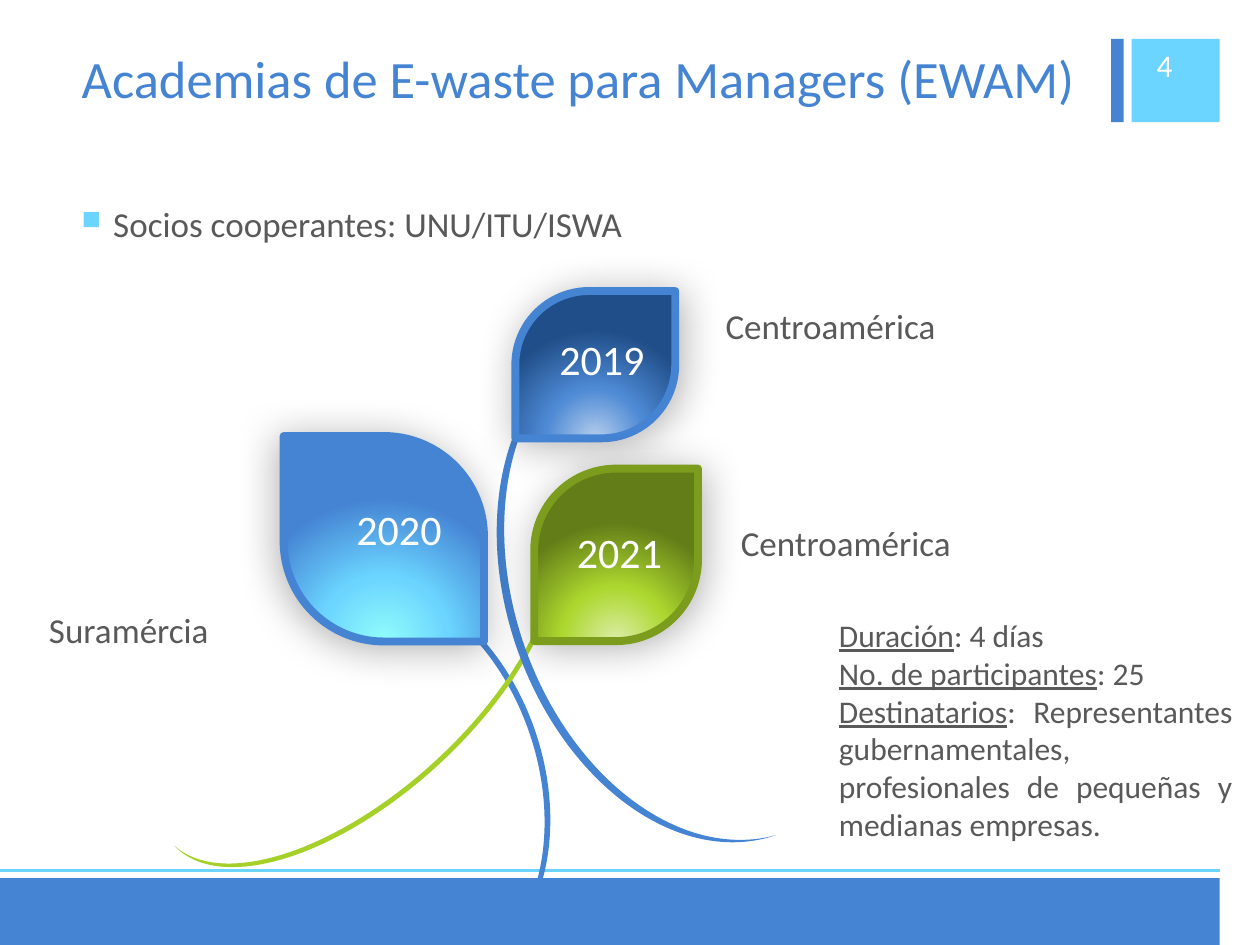
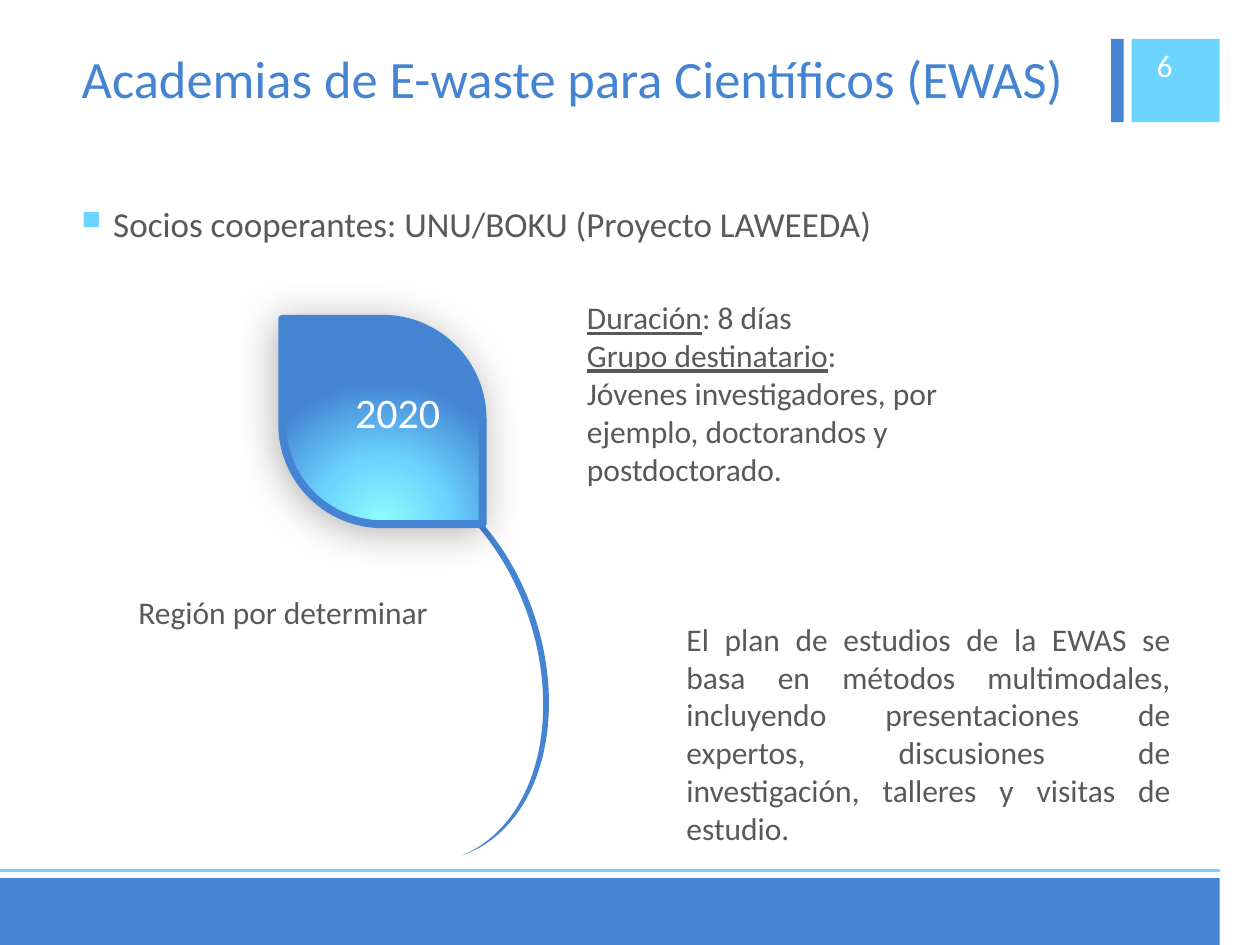
"""Builds two slides on the e-waste academies, with years drawn as leaves on stems."""
from dataclasses import dataclass
from typing import NamedTuple

from lxml.etree import SubElement
from pptx import Presentation
from pptx.dml.color import RGBColor
from pptx.enum.shapes import MSO_CONNECTOR, MSO_SHAPE
from pptx.enum.text import MSO_ANCHOR, PP_ALIGN
from pptx.oxml.ns import qn
from pptx.shapes.autoshape import Shape
from pptx.slide import Slide
from pptx.util import Pt

RECTANGLE = MSO_SHAPE.RECTANGLE
MOON = MSO_SHAPE.MOON
LEAF = MSO_SHAPE.ROUND_2_DIAG_RECTANGLE
STRAIGHT = MSO_CONNECTOR.STRAIGHT
TOP, MIDDLE = MSO_ANCHOR.TOP, MSO_ANCHOR.MIDDLE
LEFT, JUSTIFY = PP_ALIGN.LEFT, PP_ALIGN.JUSTIFY

FONT = "Calibri"
BLUE, SKY, GREEN = "4584D3", "6BD4FF", "A5D028"
OLIVE, GRAY, WHITE = "7C9C1E", "595959", "FFFFFF"
NAVY_GLOW = ("B5CEED", "4E8AD5", "204E88")
GREEN_GLOW = ("DCEEA7", "ACD72E", "637D18")
SKY_GLOW = ("91FDFA", SKY, BLUE)
GLOW_STOPS = (0, 46, 100)
RIGHT_EDGE = 697


class Frame(NamedTuple):
    """Position and size in points."""
    left: float
    top: float
    width: float
    height: float

    def moved(self, right: float, down: float) -> "Frame":
        """Returns the frame shifted by the given distances."""
        return self._replace(left=self.left + right, top=self.top + down)

    def lengths(self) -> tuple[Pt, ...]:
        """Returns the four lengths for a shape call."""
        return tuple(Pt(value) for value in self)


class Span(NamedTuple):
    """A piece of text with one look."""
    text: str
    underlined: bool = False


@dataclass(frozen=True)
class Note:
    """A text box whose paragraphs are tuples of spans."""
    frame: Frame
    paragraphs: tuple[tuple[Span, ...], ...]
    size: float = 18
    color: str = GRAY
    align: PP_ALIGN = LEFT
    anchor: MSO_ANCHOR = TOP
    wrap: bool = True
    bullet: bool = False


@dataclass(frozen=True)
class Stem:
    """A thin curved stem."""
    frame: Frame
    rotation: float
    color: str = BLUE
    thickness: float = 0.042
    flipped: bool = False


@dataclass(frozen=True)
class Leaf:
    """A glowing leaf with a year on it."""
    frame: Frame
    year: str
    year_left: float
    year_top: float
    glow: tuple[str, ...]
    outline: str = BLUE
    rotation: float = 0
    shadow_angle: int = 45


@dataclass(frozen=True)
class Page:
    """The content of one slide."""
    number: str
    title: str
    partners: str
    stems: tuple[Stem, ...]
    leaves: tuple[Leaf, ...]
    notes: tuple[Note, ...]


def color_of(value: str) -> RGBColor:
    """Turns a hex string into a colour."""
    return RGBColor.from_string(value)


def plain(text: str) -> tuple[tuple[Span, ...], ...]:
    """Wraps a text as a single paragraph."""
    return ((Span(text),),)


def fact(label: str, value: str) -> tuple[Span, ...]:
    """Returns a paragraph with an underlined label before its value."""
    return Span(label, True), Span(f":{value}")


def add_block(slide: Slide, kind: MSO_SHAPE, frame: Frame, color: str) -> Shape:
    """Adds a flat shape without outline or shadow."""
    block = slide.shapes.add_shape(kind, *frame.lengths())
    block.shadow.inherit = False
    block.fill.solid()
    block.fill.fore_color.rgb = color_of(color)
    block.line.fill.background()
    return block


def add_note(slide: Slide, note: Note) -> None:
    """Adds a text box."""
    box = slide.shapes.add_textbox(*note.frame.lengths())
    text_frame = box.text_frame
    text_frame.word_wrap = note.wrap
    text_frame.vertical_anchor = note.anchor
    for index, spans in enumerate(note.paragraphs):
        para = text_frame.add_paragraph() if index else text_frame.paragraphs[0]
        para.alignment = note.align
        if note.bullet:
            properties = para._p.get_or_add_pPr()
            properties.set("marL", str(Pt(18)))
            properties.set("indent", str(-Pt(18)))
            bullet_color = SubElement(properties, qn("a:buClr"))
            SubElement(bullet_color, qn("a:srgbClr"), {"val": SKY})
            SubElement(properties, qn("a:buSzPct"), {"val": "75000"})
            SubElement(properties, qn("a:buChar"), {"char": "■"})
        for span in spans:
            run = para.add_run()
            run.text = span.text
            run.font.name = FONT
            run.font.size = Pt(note.size)
            run.font.color.rgb = color_of(note.color)
            run.font.underline = span.underlined


def add_stem(slide: Slide, stem: Stem) -> None:
    """Adds a stem."""
    moon = add_block(slide, MOON, stem.frame, stem.color)
    moon.adjustments[0] = stem.thickness
    moon.rotation = stem.rotation
    if stem.flipped:
        moon.element.spPr.find(qn("a:xfrm")).set("flipH", "1")


def add_glow(shape: Shape, colors: tuple[str, ...]) -> None:
    """Fills a shape with a circular gradient centred below it."""
    shape.fill.gradient()
    gradient = shape.element.spPr.find(qn("a:gradFill"))
    gradient.clear()
    gradient.set("rotWithShape", "1")
    stops = SubElement(gradient, qn("a:gsLst"))
    for position, color in zip(GLOW_STOPS, colors):
        stop = SubElement(stops, qn("a:gs"), {"pos": str(position * 1000)})
        SubElement(stop, qn("a:srgbClr"), {"val": color})
    circle = SubElement(gradient, qn("a:path"), {"path": "circle"})
    SubElement(circle, qn("a:fillToRect"),
               {"l": "50000", "t": "130000", "r": "50000", "b": "-30000"})


def add_soft_shadow(shape: Shape, angle: int) -> None:
    """Puts a soft black shadow behind a shape."""
    effects = shape.element.spPr.find(qn("a:effectLst"))
    shadow = SubElement(effects, qn("a:outerShdw"), {
        "blurRad": str(Pt(23)), "dist": str(Pt(3)),
        "dir": str(angle * 60000), "rotWithShape": "0"})
    black = SubElement(shadow, qn("a:srgbClr"), {"val": "000000"})
    SubElement(black, qn("a:alpha"), {"val": "30000"})


def add_leaf(slide: Slide, leaf: Leaf) -> None:
    """Adds a leaf and its year."""
    shape = add_block(slide, LEAF, leaf.frame, leaf.outline)
    shape.adjustments[0] = 0.5
    shape.adjustments[1] = 0
    shape.rotation = leaf.rotation
    add_glow(shape, leaf.glow)
    shape.line.color.rgb = color_of(leaf.outline)
    shape.line.width = Pt(4.5)
    add_soft_shadow(shape, leaf.shadow_angle)
    year_frame = Frame(leaf.year_left, leaf.year_top, 63.4, 36)
    add_note(slide, Note(year_frame, plain(leaf.year), 24, WHITE, wrap=False))


def add_header(slide: Slide, page: Page) -> None:
    """Adds the title, the page number and the partners line."""
    add_block(slide, RECTANGLE, Frame(646.6, 22.3, 50.4, 47.5), SKY)
    add_block(slide, RECTANGLE, Frame(635, 22.3, 7.2, 47.5), BLUE)
    add_note(slide, Note(Frame(39.6, 19.4, 586.8, 50.4), plain(page.title),
                         30, BLUE, anchor=MIDDLE))
    add_note(slide, Note(Frame(653.8, 23, 43.9, 28.8), plain(page.number), color=WHITE))
    add_note(slide, Note(Frame(39.6, 112, 658, 32), plain(page.partners), 20, bullet=True))


def add_ground_line(slide: Slide) -> None:
    """Adds the thin line above the footer band."""
    line = slide.shapes.add_connector(STRAIGHT, Pt(RIGHT_EDGE), Pt(497.5), Pt(0), Pt(497.5))
    line.line.color.rgb = color_of(SKY)
    line.line.width = Pt(2)
    SubElement(line.element.spPr, qn("a:effectLst"))


def add_page(deck: Presentation, page: Page) -> None:
    """Adds one slide."""
    slide = deck.slides.add_slide(deck.slide_layouts[6])
    add_header(slide, page)
    add_ground_line(slide)
    for stem in page.stems:
        add_stem(slide, stem)
    for leaf in page.leaves:
        add_leaf(slide, leaf)
    for note in page.notes:
        add_note(slide, note)
    add_block(slide, RECTANGLE, Frame(0, 501.8, RIGHT_EDGE, 38.2), BLUE)


def south_stem(right: float = 0, down: float = 0) -> Stem:
    """Returns the stem of the 2020 leaf."""
    return Stem(Frame(225.4, 314.6, 82.8, 234).moved(right, down), 161.4)


def south_leaf(right: float = 0, down: float = 0) -> Leaf:
    """Returns the 2020 leaf."""
    return Leaf(Frame(160.6, 250.6, 117.4, 114.5).moved(right, down), "2020",
                196.6 + right, 284.4 + down, SKY_GLOW, rotation=270, shadow_angle=135)


MANAGERS = Page(
    "4", "Academias de E-waste para Managers (EWAM)", "Socios cooperantes: UNU/ITU/ISWA",
    (south_stem(),
     Stem(Frame(193.7, 268.6, 68.4, 285.8), 47.3, GREEN, flipped=True),
     Stem(Frame(292.3, 203, 105.1, 299.5), 341, thickness=0.043)),
    (Leaf(Frame(294.5, 166.3, 91.4, 84.2), "2019", 312.5, 187.2, NAVY_GLOW),
     Leaf(Frame(305.3, 267.8, 93.6, 98.6), "2021", 322.6, 297.4, GREEN_GLOW, OLIVE),
     south_leaf()),
    (Note(Frame(20.9, 344.2, 159.8, 31.7), plain("Suramércia"), 20),
     Note(Frame(416.2, 294.5, 164.2, 31.7), plain("Centroamérica"), 20),
     Note(Frame(407.5, 170.6, 195.8, 55.4), plain("Centroamérica"), 20),
     Note(Frame(472.3, 348.5, 239, 138.2),
          (fact("Duración", " 4 días"), fact("No. de participantes", " 25"),
           fact("Destinatarios", " Representantes gubernamentales, profesionales de "
                                 "pequeñas y medianas empresas.")), align=JUSTIFY)))

SCIENTISTS = Page(
    "6", "Academias de E-waste para Científicos (EWAS)",
    "Socios cooperantes: UNU/BOKU (Proyecto LAWEEDA)",
    (south_stem(-0.8, -67),), (south_leaf(-0.8, -67),),
    (Note(Frame(328.3, 167, 224.6, 116.6),
          (fact("Duración", " 8 días"), fact("Grupo destinatario", ""),
           (Span("Jóvenes investigadores, por ejemplo, doctorandos y postdoctorado."),))),
     Note(Frame(385.2, 350.6, 290.9, 138.2),
          plain("El plan de estudios de la EWAS se basa en métodos multimodales, incluyendo "
                "presentaciones de expertos, discusiones de investigación, talleres y "
                "visitas de estudio."), align=JUSTIFY),
     Note(Frame(72, 335.5, 187.2, 28.8), plain("Región por determinar"))))


def main() -> None:
    """Builds and saves the deck."""
    deck = Presentation()
    deck.slide_width, deck.slide_height = Pt(720), Pt(540)
    for page in (MANAGERS, SCIENTISTS):
        add_page(deck, page)
    deck.save("out.pptx")


if __name__ == "__main__":
    main()
